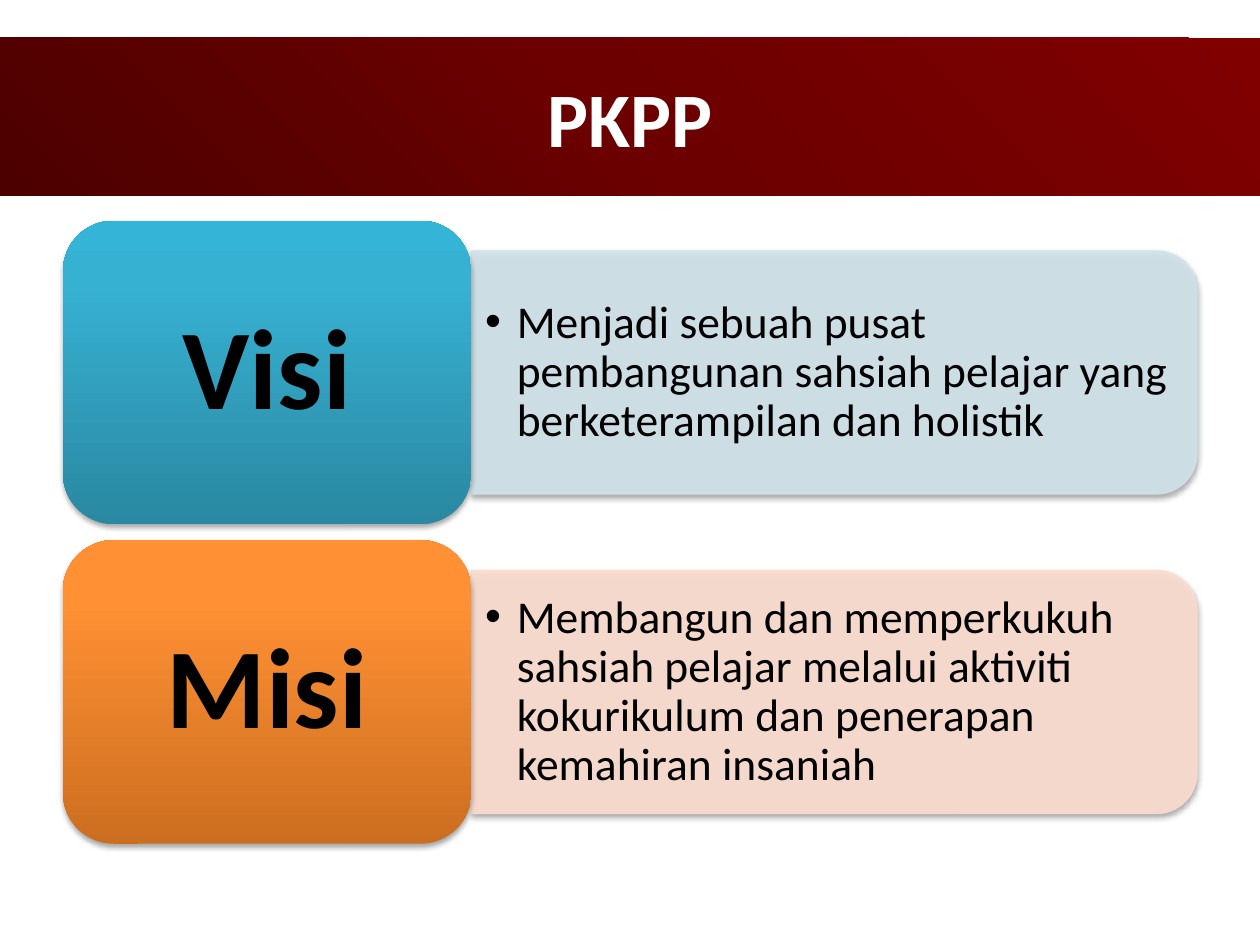
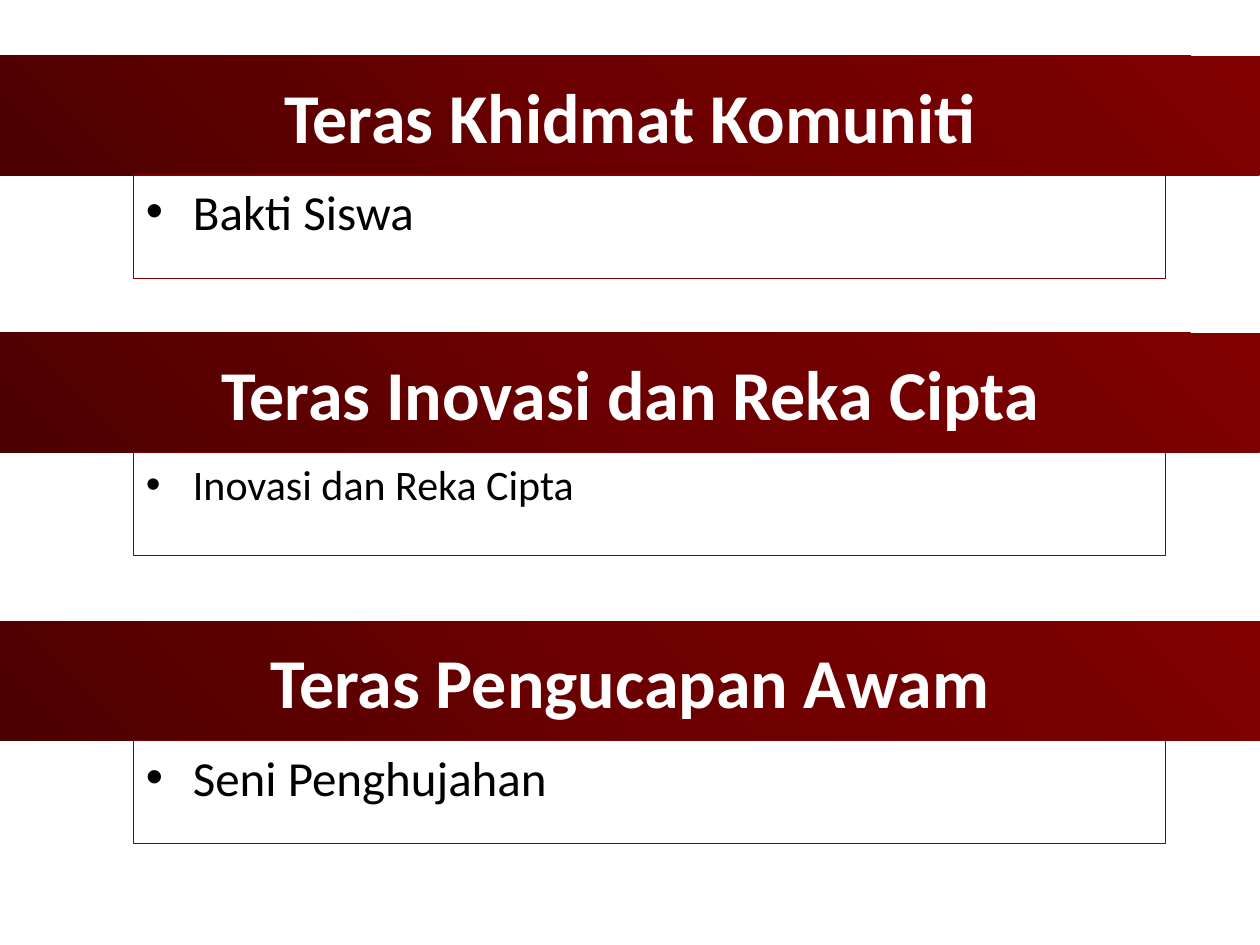
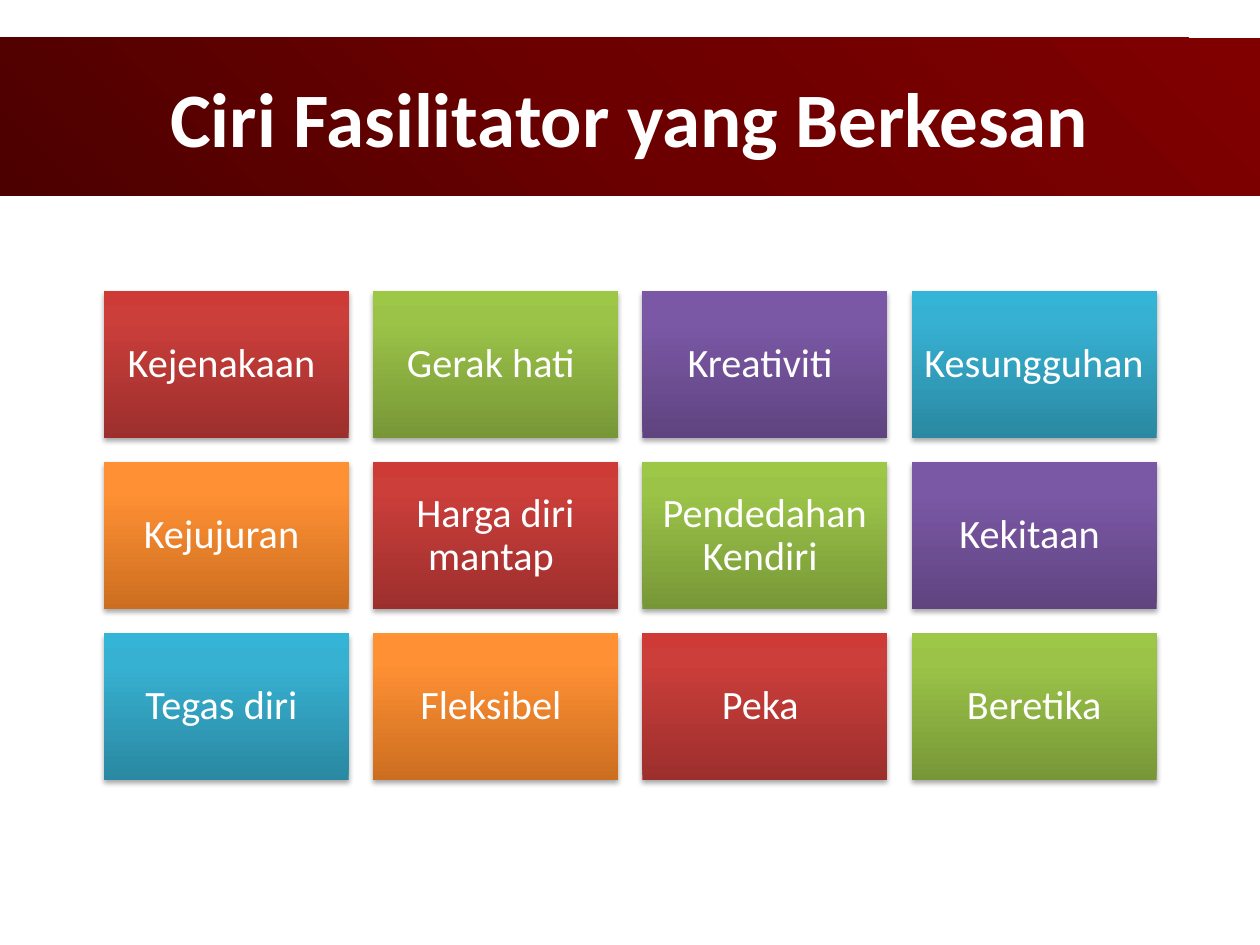
from lxml import etree
from pptx import Presentation
from pptx.dml.color import RGBColor
from pptx.enum.shapes import MSO_SHAPE
from pptx.enum.text import MSO_ANCHOR, PP_ALIGN
from pptx.oxml import parse_xml
from pptx.oxml.ns import nsdecls, qn
from pptx.util import Cm, Pt

# Content
VISION_TITLE = "PKPP"
VISION_ROWS = [
    ("Visi", "Menjadi sebuah pusat pembangunan sahsiah pelajar yang "
             "berketerampilan dan holistik"),
    ("Misi", "Membangun dan memperkukuh sahsiah pelajar melalui aktiviti "
             "kokurikulum dan penerapan kemahiran insaniah"),
]
# Heading, item, item size, top of the band in cm
PILLARS = [
    ("Teras Khidmat Komuniti", "Bakti Siswa", 28, 1.12),
    ("Teras Inovasi dan Reka Cipta", "Inovasi dan Reka Cipta", 24, 6.71),
    ("Teras Pengucapan Awam", "Seni Penghujahan", 28, 12.52),
]
TRAITS_TITLE = "Ciri Fasilitator yang Berkesan"
TRAITS = [
    "Kejenakaan ", "Gerak hati ", "Kreativiti ", "Kesungguhan ",
    "Kejujuran ", "Harga diri mantap ", "Pendedahan Kendiri ", "Kekitaan ",
    "Tegas diri ", "Fleksibel ", "Peka ", "Beretika",
]

# Shared look
FONT = "Calibri"
SLIDE_W, SLIDE_H = 25.4, 19.05
BLACK = RGBColor(0x00, 0x00, 0x00)
WHITE = RGBColor(0xFF, 0xFF, 0xFF)
MAROON = RGBColor(0x80, 0x00, 0x00)
PALE_BLUE = RGBColor(0xD0, 0xE3, 0xEA)
PALE_ORANGE = RGBColor(0xFC, 0xDD, 0xCF)
BAND_STOPS = [(0, RGBColor(0x4C, 0x00, 0x00)), (50, RGBColor(0x6C, 0x00, 0x00)),
              (100, MAROON)]
RED = [(0, RGBColor(0x9C, 0x2F, 0x2D)), (80, RGBColor(0xCB, 0x3E, 0x3A)),
       (100, RGBColor(0xCE, 0x3B, 0x37))]
GREEN = [(0, RGBColor(0x77, 0x97, 0x37)), (80, RGBColor(0x9B, 0xC3, 0x48)),
         (100, RGBColor(0x9D, 0xC7, 0x46))]
PURPLE = [(0, RGBColor(0x5F, 0x44, 0x80)), (80, RGBColor(0x7B, 0x58, 0xA6)),
          (100, RGBColor(0x7C, 0x57, 0xA8))]
BLUE = [(0, RGBColor(0x2A, 0x88, 0xA2)), (80, RGBColor(0x37, 0xB1, 0xD2)),
        (100, RGBColor(0x34, 0xB4, 0xD6))]
ORANGE = [(0, RGBColor(0xCC, 0x6E, 0x20)), (80, RGBColor(0xFF, 0x90, 0x34)),
          (100, RGBColor(0xFF, 0x91, 0x36))]
TILE_COLOURS = [RED, GREEN, PURPLE, BLUE, ORANGE]

UPWARD = '<a:lin ang="16200000" scaled="0"/>'
FROM_CORNER = ('<a:path path="circle">'
               '<a:fillToRect t="100000" r="100000"/></a:path>')


def add_box(s, kind, x, y, w, h):
    sp = s.shapes.add_shape(kind, Cm(x), Cm(y), Cm(w), Cm(h))
    sp.shadow.inherit = False
    sp.fill.background()
    sp.line.fill.background()
    return sp


def set_gradient(sp, stops, direction):
    gs = "".join(f'<a:gs pos="{pos * 1000}"><a:srgbClr val="{rgb}"/></a:gs>'
                 for pos, rgb in stops)
    old = sp._element.spPr.find(qn("a:noFill"))
    old.getparent().replace(old, parse_xml(
        f'<a:gradFill {nsdecls("a")} rotWithShape="1">'
        f'<a:gsLst>{gs}</a:gsLst>{direction}</a:gradFill>'))


def set_shadow(sp):
    sp._element.spPr.find(qn("a:effectLst")).append(parse_xml(
        f'<a:outerShdw {nsdecls("a")} blurRad="40000" dist="23000" '
        'dir="5400000" rotWithShape="0"><a:srgbClr val="000000">'
        '<a:alpha val="35000"/></a:srgbClr></a:outerShdw>'))


def set_text(sp, text, size, color, bold=False, align=PP_ALIGN.CENTER,
             anchor=MSO_ANCHOR.MIDDLE, insets=(0.25, 0.13), spacing=None,
             bullet_indent=None):
    tf = sp.text_frame
    side, end = (Cm(v) for v in insets)
    frame = {"word_wrap": True, "vertical_anchor": anchor, "margin_left": side,
             "margin_right": side, "margin_top": end, "margin_bottom": end}
    for name, value in frame.items():
        setattr(tf, name, value)
    p = tf.paragraphs[0]
    if bullet_indent:
        pPr = p._p.get_or_add_pPr()
        pPr.set("marL", str(Cm(bullet_indent)))
        pPr.set("indent", str(-Cm(bullet_indent)))
        etree.SubElement(pPr, qn("a:buFont")).set("typeface", "Arial")
        etree.SubElement(pPr, qn("a:buChar")).set("char", "•")
    p.alignment = align
    if spacing:
        p.line_spacing = spacing
    r = p.add_run()
    r.text = text
    for name, value in {"name": FONT, "size": Pt(size), "bold": bold}.items():
        setattr(r.font, name, value)
    r.font.color.rgb = color


def add_band(s, text, top=0.76, height=3.18, size=44):
    band = add_box(s, MSO_SHAPE.RECTANGLE, 0, top, SLIDE_W, height)
    set_gradient(band, BAND_STOPS, FROM_CORNER)
    set_text(band, text, size, WHITE, bold=True)


def add_panel(s, x, y, w, h, color):
    # Rounded on the right: a shape with a rounded top, turned by 90 degrees
    panel = add_box(s, MSO_SHAPE.ROUND_2_SAME_RECTANGLE,
                    x + (w - h) / 2, y + (h - w) / 2, h, w)
    panel.rotation = 90
    panel.line.width = Pt(0.75)
    for fill in (panel.fill, panel.line.fill):
        fill.solid()
        fill.fore_color.rgb = color
    for clr in panel._element.spPr.iter(qn("a:srgbClr")):
        etree.SubElement(clr, qn("a:alpha")).set("val", "90000")
    set_shadow(panel)


def build_vision(s):
    add_band(s, VISION_TITLE)
    x, top, w, h, gap = 1.27, 4.45, 8.23, 6.12, 0.32
    panel_w, panel_h, text_w, text_h = 14.63, 4.9, 14.4, 4.42
    looks = [(BLUE, PALE_BLUE), (ORANGE, PALE_ORANGE)]
    for i, ((name, text), (stops, pale)) in enumerate(zip(VISION_ROWS, looks)):
        y = top + i * (h + gap)
        middle = y + h / 2
        add_panel(s, x + w, middle - panel_h / 2, panel_w, panel_h, pale)
        box = s.shapes.add_textbox(Cm(x + w), Cm(middle - text_h / 2),
                                   Cm(text_w), Cm(text_h))
        set_text(box, text, 26, BLACK, align=PP_ALIGN.LEFT, insets=(0.28, 0.13),
                 spacing=0.9, bullet_indent=0.64)
        pill = add_box(s, MSO_SHAPE.ROUNDED_RECTANGLE, x, y, w, h)
        set_gradient(pill, stops, UPWARD)
        set_shadow(pill)
        set_text(pill, name, 65, BLACK, bold=True, insets=(0.69, 0.36),
                 spacing=0.9)


def build_pillars(s):
    band_h = 2.41
    for heading, item, size, top in PILLARS:
        add_band(s, heading, top, band_h, 40)
        box = add_box(s, MSO_SHAPE.RECTANGLE, 2.69, top + band_h, 20.8, 2.08)
        box.line.color.rgb = MAROON
        box.line.width = Pt(0.75)
        set_text(box, item, size, BLACK, align=PP_ALIGN.LEFT,
                 anchor=MSO_ANCHOR.TOP, bullet_indent=0.95)


def build_traits(s):
    add_band(s, TRAITS_TITLE)
    left, top, w, h, gap, columns = 2.09, 5.87, 4.94, 2.96, 0.49, 4
    for i, trait in enumerate(TRAITS):
        row, col = divmod(i, columns)
        tile = add_box(s, MSO_SHAPE.RECTANGLE, left + col * (w + gap),
                       top + row * (h + gap), w, h)
        set_gradient(tile, TILE_COLOURS[i % len(TILE_COLOURS)], UPWARD)
        set_shadow(tile)
        set_text(tile, trait, 23, WHITE, insets=(0.25, 0.25), spacing=0.9)


def main():
    prs = Presentation()
    prs.slide_width, prs.slide_height = Cm(SLIDE_W), Cm(SLIDE_H)
    for build in (build_vision, build_pillars, build_traits):
        build(prs.slides.add_slide(prs.slide_layouts[6]))
    prs.save("out.pptx")


if __name__ == "__main__":
    main()
